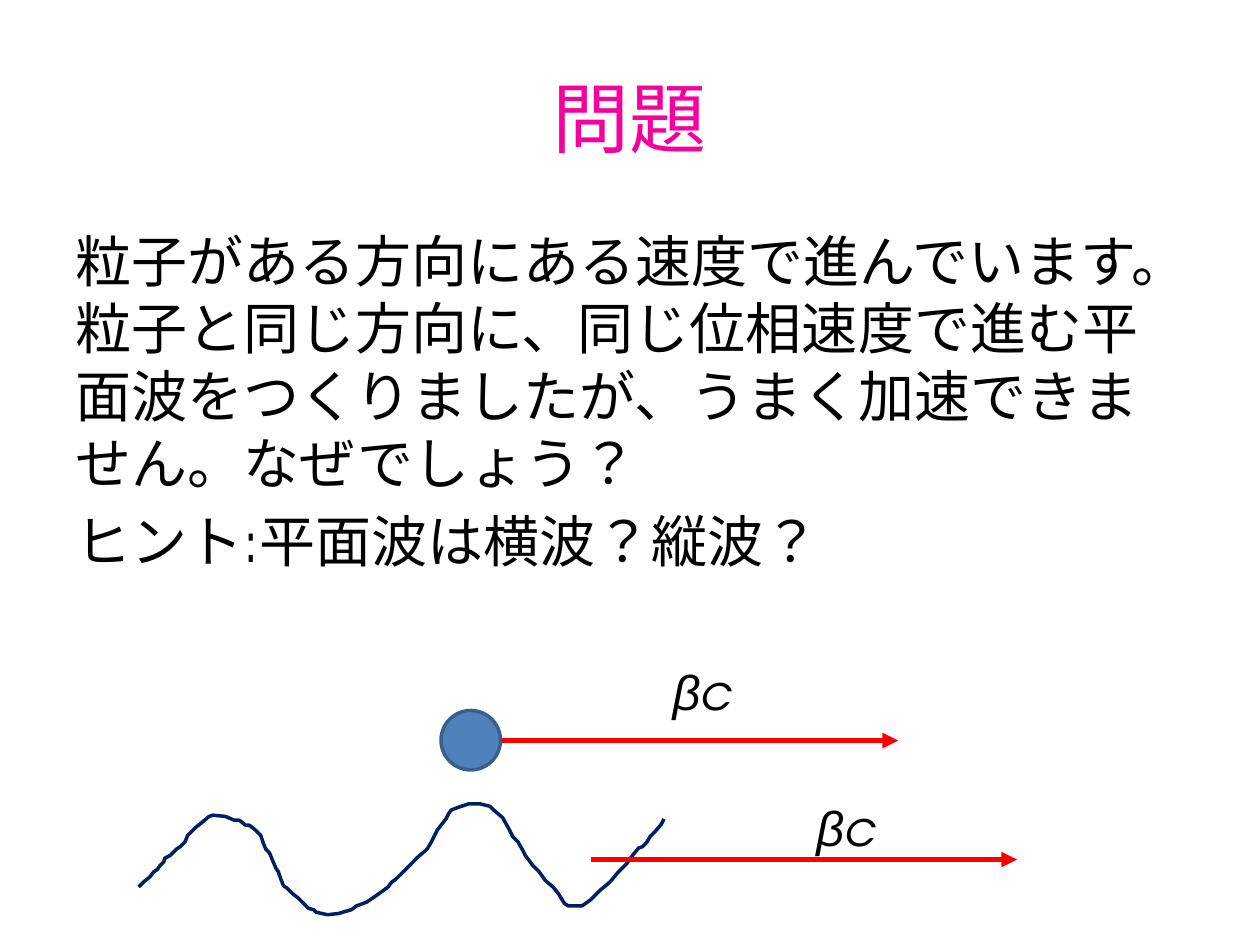
from lxml.etree import SubElement
from pptx import Presentation
from pptx.dml.color import RGBColor
from pptx.enum.lang import MSO_LANGUAGE_ID
from pptx.enum.shapes import MSO_CONNECTOR, MSO_SHAPE
from pptx.enum.text import MSO_ANCHOR, PP_ALIGN
from pptx.oxml.ns import qn
from pptx.util import Pt

PINK = RGBColor(0xF5, 0x00, 0x9D)
BLACK = RGBColor(0x00, 0x00, 0x00)
RED = RGBColor(0xFF, 0x00, 0x00)
BLUE = RGBColor(0x4F, 0x81, 0xBD)
DARK_BLUE = RGBColor(0x3A, 0x5F, 0x8C)
NAVY = RGBColor(0x00, 0x20, 0x60)

MAIN_FONT = "TeX Gyre Adventor"
GREEK_FONT = "Arial"
WAVE_UNIT = Pt(0.72)

WAVE_POINTS = [
    (110, 704), (114, 700), (119, 696), (122, 692), (125, 690), (127, 687),
    (130, 684), (131, 681), (135, 679), (140, 674), (143, 672), (147, 668),
    (149, 663), (151, 661), (155, 657), (160, 653), (166, 648), (169, 647),
    (179, 648), (186, 651), (190, 651), (195, 655), (198, 655), (203, 659),
    (207, 663), (209, 669), (211, 674), (214, 677), (216, 682), (219, 689),
    (221, 692), (223, 698), (225, 703), (228, 705), (232, 709), (237, 713),
    (245, 721), (249, 722), (251, 724), (260, 726), (269, 725), (272, 724),
    (279, 722), (283, 719), (291, 716), (297, 712), (304, 707), (308, 704),
    (311, 700), (314, 698), (320, 692), (323, 689), (332, 680), (339, 674),
    (342, 669), (344, 665), (347, 659), (350, 655), (354, 650), (356, 646),
    (358, 643), (363, 641), (372, 638), (381, 638), (389, 640), (392, 643),
    (399, 649), (404, 658), (407, 664), (411, 668), (415, 675), (417, 679),
    (423, 687), (428, 692), (433, 699), (439, 704), (443, 709), (448, 717),
    (451, 719), (455, 719), (462, 719), (469, 714), (473, 710), (477, 706),
    (482, 702), (485, 699), (490, 693), (492, 691), (497, 686), (502, 679),
    (507, 673), (510, 672), (513, 669), (516, 664), (520, 660), (525, 654),
    (527, 650),
]


class SlideBuilder:
    def __init__(self, slide):
        self.slide = slide
        self.font = {"name": MAIN_FONT, "size": Pt(32), "language_id": MSO_LANGUAGE_ID.JAPANESE}

    def add_text(self, box, paragraphs, font=None, frame=None, paragraph_format=None):
        shape = self.slide.shapes.add_textbox(*map(Pt, box))
        text_frame = shape.text_frame
        self.apply(text_frame, {"word_wrap": True, **(frame or {})})
        for index, runs in enumerate(paragraphs):
            paragraph = text_frame.add_paragraph() if index else text_frame.paragraphs[0]
            self.apply(paragraph, paragraph_format or {})
            for text, run_font in runs:
                run = paragraph.add_run()
                run.text = text
                values = {**self.font, **(font or {}), **run_font}
                run.font.color.rgb = values.pop("color", BLACK)
                self.apply(run.font, values)

    def add_velocity_label(self, left, top):
        runs = [("β", {"name": GREEK_FONT}), ("c", {})]
        self.add_text((left, top, 60, 41), [runs], {"size": Pt(28), "italic": True})

    def add_arrow(self, left, right, y):
        connector = self.slide.shapes.add_connector(
            MSO_CONNECTOR.STRAIGHT, Pt(left), Pt(y), Pt(right), Pt(y)
        )
        self.set_line(connector, RED, 3)
        SubElement(connector.line._get_or_add_ln(), qn("a:tailEnd"), type="triangle")
        SubElement(connector._element.spPr, qn("a:effectLst"))

    def add_particle(self, left, top, diameter):
        shape = self.slide.shapes.add_shape(
            MSO_SHAPE.OVAL, Pt(left), Pt(top), Pt(diameter), Pt(diameter)
        )
        shape.shadow.inherit = False
        shape.fill.solid()
        shape.fill.fore_color.rgb = BLUE
        self.set_line(shape, DARK_BLUE, 2)

    def add_wave(self, points):
        builder = self.slide.shapes.build_freeform(*points[0], scale=WAVE_UNIT)
        builder.add_line_segments(points[1:], close=False)
        shape = builder.convert_to_shape()
        shape.shadow.inherit = False
        shape.fill.background()
        self.set_line(shape, NAVY, 2)

    @staticmethod
    def set_line(shape, color, width):
        shape.line.color.rgb = color
        shape.line.width = Pt(width)

    @staticmethod
    def apply(target, values):
        for name, value in values.items():
            setattr(target, name, value)


def main():
    presentation = Presentation()
    presentation.slide_width = Pt(720)
    presentation.slide_height = Pt(540)
    builder = SlideBuilder(presentation.slides.add_slide(presentation.slide_layouts[6]))

    builder.add_text(
        (36, 21.6, 648, 90),
        [[("問題", {})]],
        font={"size": Pt(44), "color": PINK},
        frame={"vertical_anchor": MSO_ANCHOR.MIDDLE},
        paragraph_format={"alignment": PP_ALIGN.CENTER},
    )
    question = (
        "粒子がある方向にある速度で進んでいます。"
        "粒子と同じ方向に、同じ位相速度で進む平面波をつくりましたが、"
        "うまく加速できません。なぜでしょう？"
    )
    hint = "ヒント:平面波は横波？縦波？"
    builder.add_text(
        (36, 126, 648, 356.4),
        [[(question, {})], [(hint, {})]],
        paragraph_format={"space_before": Pt(6.4)},
    )
    builder.add_arrow(269.3, 513.3, 423.2)
    builder.add_particle(252, 406, 34)
    builder.add_velocity_label(377.3, 374.4)
    builder.add_wave(WAVE_POINTS)
    builder.add_arrow(337.5, 581.2, 491.2)
    builder.add_velocity_label(459.4, 452.2)

    presentation.save("out.pptx")


if __name__ == "__main__":
    main()
